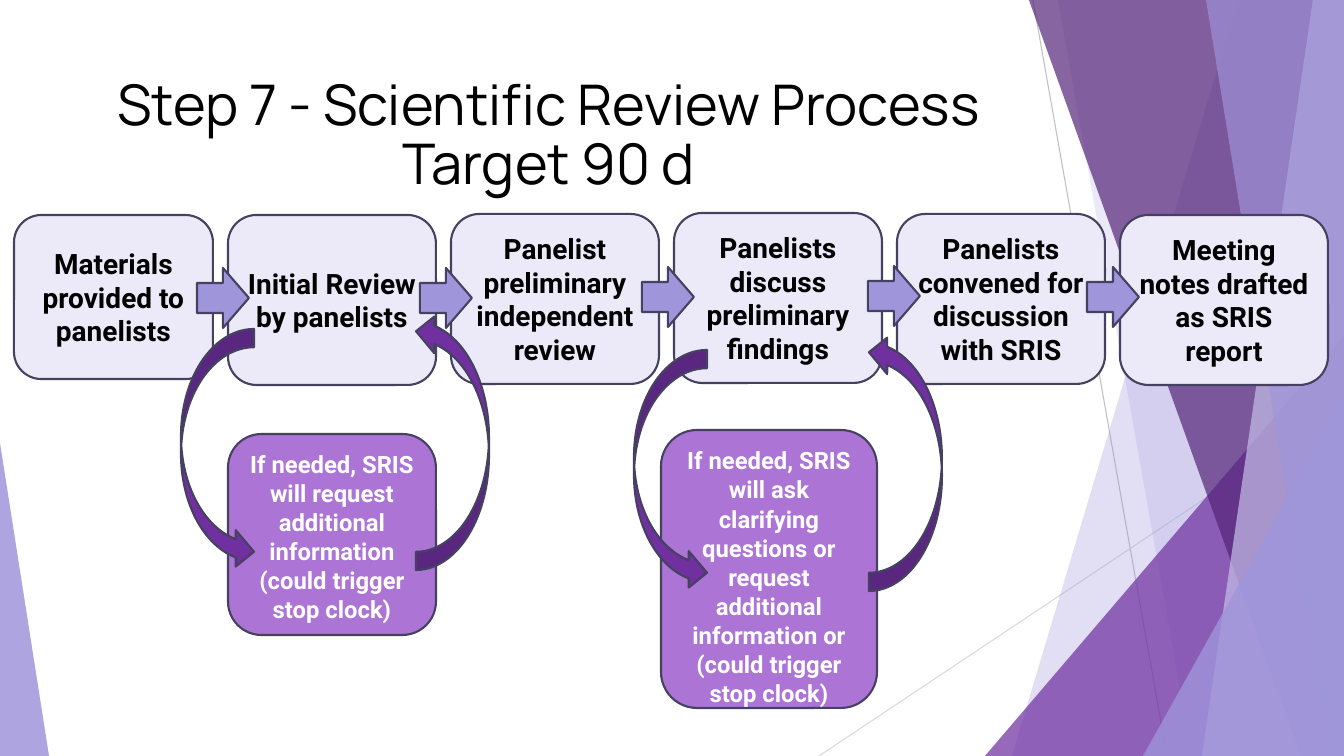
"""Build the Step 7 scientific review process slide."""
from lxml import etree
from pptx import Presentation
from pptx.dml.color import RGBColor
from pptx.enum import shapes, text
from pptx.oxml import ns
from pptx.util import Emu, Pt

PX = 914400 / 100.8
W, H = 1344, 756
AUTO = shapes.MSO_SHAPE

BLACK = RGBColor(0x00, 0x00, 0x00)
WHITE = RGBColor(0xFF, 0xFF, 0xFF)
GREY = RGBColor(0xBF, 0xBF, 0xBF)
SILVER = RGBColor(0xD9, 0xD9, 0xD9)
LAVENDER = RGBColor(0x9F, 0x95, 0xDB)
PALE = RGBColor(0xC5, 0xBF, 0xE9)
MIST = RGBColor(0xEC, 0xEA, 0xF8)
ORCHID = RGBColor(0xAB, 0x74, 0xD5)
PURPLE = RGBColor(0x70, 0x30, 0xA0)
DEEP = RGBColor(0x54, 0x24, 0x78)
OUTLINE = RGBColor(0x46, 0x41, 0x60)

TITLE = "Step 7 - Scientific Review Process\vTarget 90 d"
STEPS = [
    ("Materials provided to panelists", 215),
    ("Initial Review by panelists", 215),
    ("Panelist preliminary independent review", 214),
    ("Panelists discuss preliminary findings", 213),
    ("Panelists convened for discussion with SRIS", 214),
    ("Meeting notes drafted as SRIS report", 215),
]
ARROWS = [(197, 268), (420, 268), (642, 267), (868, 266), (1087, 267)]
REQUESTS = [
    ("If needed, SRIS will request additional information "
     "(could trigger stop clock)", (228, 434, 208, 201)),
    ("If needed, SRIS will ask clarifying questions or request additional "
     "information or (could trigger stop clock)", (661, 430, 216, 278)),
]
LOOPS = [(181, 329), (634, 350)]

RAYS = [((1033, 0), (1167, H), GREY), ((W, 406), (819, H), SILVER)]
PANELS = [
    ("band", (1238, 1012), LAVENDER, 30),
    ("band", (1058, 1192), LAVENDER, 20),
    ("right wedge", (985, 336, 359, 420), PURPLE, 72),
    ("band", (1029, 1301), DEEP, 70),
    ("band", (1313, 1202), PALE, 70),
    ("band", (1206, 1329), LAVENDER, 65),
    ("right wedge", (1143, 396, 201, 360), LAVENDER, 80),
    ("left wedge", (0, 443, 49, 313), LAVENDER, 85),
]


def emu(*lengths):
    return [Emu(round(n * PX)) for n in lengths]


def add_shape(slide, kind, box, fill):
    sp = slide.shapes.add_shape(kind, *emu(*box))
    sp.shadow.inherit = False
    sp.fill.solid()
    sp.fill.fore_color.rgb = fill
    sp.line.color.rgb = OUTLINE
    sp.line.width = Pt(1.5)
    return sp


def write(sp, words, font, size, color, anchor, bold, spacing):
    tf = sp.text_frame
    tf.text = words
    tf.word_wrap = True
    tf.auto_size = text.MSO_AUTO_SIZE.NONE
    tf.vertical_anchor = anchor
    p = tf.paragraphs[0]
    p.alignment = text.PP_ALIGN.CENTER
    p.line_spacing = spacing
    for r in p.runs:
        r.font.name = font
        r.font.size = Pt(size)
        r.font.bold = bold
        r.font.color.rgb = color


def add_ray(slide, start, end, color):
    ray = slide.shapes.add_connector(
        shapes.MSO_CONNECTOR.STRAIGHT, *emu(*start, *end))
    ray.line.color.rgb = color
    ray.line.width = Pt(0.75)
    etree.SubElement(ray._element.spPr, ns.qn("a:effectLst"))


def add_panel(slide, kind, place, color, opacity):
    if kind == "band":
        top, bottom = place
        outline = slide.shapes.build_freeform(top, 0, scale=PX)
        outline.add_line_segments([(W, 0), (W, H), (bottom, H)])
        sp = outline.convert_to_shape()
        sp.shadow.inherit = False
        sp.fill.solid()
        sp.fill.fore_color.rgb = color
    else:
        sp = add_shape(slide, AUTO.ISOSCELES_TRIANGLE, place, color)
        sp.adjustments[0] = 1 if kind == "right wedge" else 0
    sp.line.fill.background()
    rgb = sp._element.spPr.find(ns.qn("a:solidFill"))[0]
    etree.SubElement(rgb, ns.qn("a:alpha"), val=str(opacity * 1000))


def main():
    prs = Presentation()
    prs.slide_width, prs.slide_height = emu(W, H)
    slide = prs.slides.add_slide(prs.slide_layouts[5])

    for ray in RAYS:
        add_ray(slide, *ray)
    for panel in PANELS:
        add_panel(slide, *panel)

    title = slide.shapes.title
    title.left, title.top, title.width, title.height = emu(75, 67, 947, 145)
    write(title, TITLE, "Manrope", 40, BLACK, text.MSO_ANCHOR.TOP, False, 0.88)
    title.text_frame.margin_top = emu(11)[0]
    slide.shapes._spTree.append(title._element)

    for i, (words, top) in enumerate(STEPS):
        box = (228 + 223 * (i - 1), top, 208, 170) if i else (14, top, 199, 164)
        sp = add_shape(slide, AUTO.ROUNDED_RECTANGLE, box, MIST)
        write(sp, words, "Roboto", 20, BLACK, text.MSO_ANCHOR.MIDDLE, True, 1.0)
    for left, top in ARROWS:
        add_shape(slide, AUTO.RIGHT_ARROW, (left, top, 52, 60), LAVENDER)
    for words, box in REQUESTS:
        sp = add_shape(slide, AUTO.ROUNDED_RECTANGLE, box, ORCHID)
        write(sp, words, "Roboto", 17, WHITE, text.MSO_ANCHOR.TOP, True, 1.02)
    for x, y in LOOPS:
        add_shape(slide, AUTO.CURVED_RIGHT_ARROW, (x, y, 73, 241), PURPLE)
        back = add_shape(
            slide, AUTO.CURVED_UP_ARROW, (x + 143, y + 76, 257, 73), PURPLE)
        back.rotation = 270

    prs.save("out.pptx")


if __name__ == "__main__":
    main()
